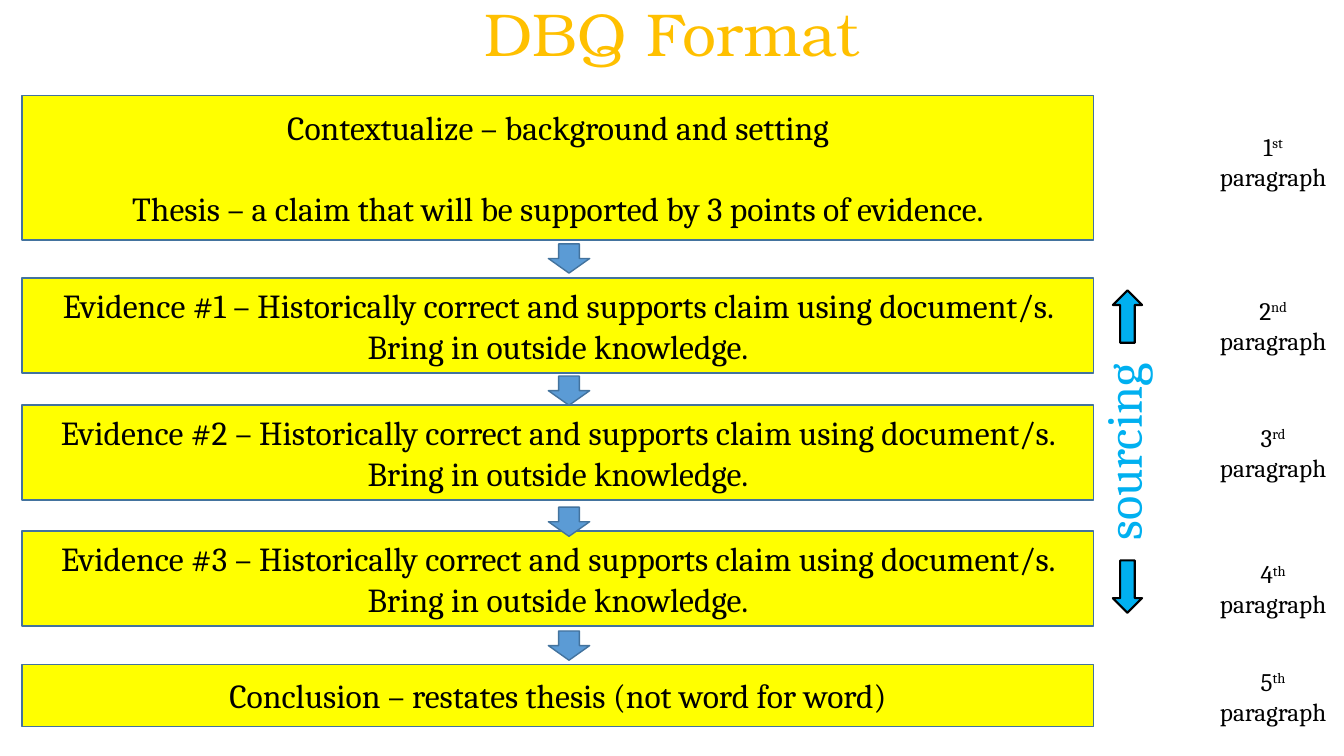
from dataclasses import dataclass

from pptx import Presentation
from pptx.dml.color import RGBColor
from pptx.enum.shapes import MSO_SHAPE
from pptx.enum.text import MSO_ANCHOR, MSO_AUTO_SIZE, PP_ALIGN
from pptx.util import Pt

COLORS = {
    "title": "FFC000",
    "step": "FFFF00",
    "outline": "43739E",
    "flow": "5B9BD5",
    "sourcing": "00B0F0",
    "ink": "000000",
}
TITLE_FONT = "TeX Gyre Bonum"
BODY_FONT = "Cambria"
STEP_LEFT, STEP_WIDTH = 15.84, 765.36
FLOW_LEFT, FLOW_WIDTH, FLOW_HEIGHT = 391.7, 29.5, 20.9
LABEL_LEFT, LABEL_WIDTH, LABEL_HEIGHT = 859, 100.8, 51.1


@dataclass
class Step:
    top: float
    height: float
    lines: list[str]
    label_top: float
    ordinal: str


def evidence(number: int) -> list[str]:
    return [f"Evidence #{number} – Historically correct and supports claim "
            "using document/s. Bring in outside knowledge."]


STEPS = [
    Step(68.4, 103, ["Contextualize – background and setting",
                     "Thesis – a claim that will be supported by 3 points of evidence."],
         90, "st"),
    Step(198.7, 67.7, evidence(1), 207.4, "nd"),
    Step(289.4, 67.7, evidence(2), 298.1, "rd"),
    Step(379.4, 67.7, evidence(3), 395.3, "th"),
    Step(474.5, 44.6, ["Conclusion – restates thesis (not word for word)"], 472.3, "th"),
]
FLOW_TOPS = [174.2, 268.6, 362.2, 450.7]


def color(name: str) -> RGBColor:
    return RGBColor.from_string(COLORS[name])


def format_paragraph(para, size: float, ink: str = "ink", font: str = BODY_FONT) -> None:
    para.alignment = PP_ALIGN.CENTER
    para.font.name = font
    para.font.size = Pt(size)
    para.font.color.rgb = color(ink)


def add_block(shapes, kind, left: float, top: float, width: float, height: float,
              fill: str, outline: str, weight: float):
    block = shapes.add_shape(kind, Pt(left), Pt(top), Pt(width), Pt(height))
    block.shadow.inherit = False
    block.fill.solid()
    block.fill.fore_color.rgb = color(fill)
    block.line.color.rgb = color(outline)
    block.line.width = Pt(weight)
    return block


def add_label(shapes, left: float, top: float, width: float, height: float):
    box = shapes.add_textbox(Pt(left), Pt(top), Pt(width), Pt(height))
    box.text_frame.word_wrap = True
    box.text_frame.auto_size = MSO_AUTO_SIZE.SHAPE_TO_FIT_TEXT
    return box


def add_title(page) -> None:
    title = page.shapes.title
    title.left, title.top, title.width, title.height = Pt(0), Pt(0), Pt(960), Pt(52.6)
    frame = title.text_frame
    frame.text = "DBQ Format"
    frame.auto_size = MSO_AUTO_SIZE.NONE
    frame.vertical_anchor = MSO_ANCHOR.MIDDLE
    para = frame.paragraphs[0]
    para.line_spacing = 0.9
    format_paragraph(para, 43.2, "title", TITLE_FONT)


def add_step(page, number: int, step: Step) -> None:
    box = add_block(page.shapes, MSO_SHAPE.RECTANGLE, STEP_LEFT, step.top,
                    STEP_WIDTH, step.height, "step", "outline", 1)
    frame = box.text_frame
    frame.vertical_anchor = MSO_ANCHOR.MIDDLE
    frame.text = "\n".join(step.lines)
    for para in frame.paragraphs:
        format_paragraph(para, 24)
    for para in frame.paragraphs[1:]:
        para.space_before = Pt(29)

    label = add_label(page.shapes, LABEL_LEFT, step.label_top, LABEL_WIDTH, LABEL_HEIGHT)
    para = label.text_frame.paragraphs[0]
    format_paragraph(para, 18)
    for text in (str(number), step.ordinal, " paragraph"):
        span = para.add_run()
        span.text = text
        if text == step.ordinal:
            span.font._element.set("baseline", "30000")


def add_sourcing(page) -> None:
    group = page.shapes.add_group_shape()
    label = add_label(group.shapes, 714.2, 297.4, 175, 51.1)
    label.rotation = 270
    para = label.text_frame.paragraphs[0]
    para.text = "sourcing"
    format_paragraph(para, 36, "sourcing")
    for kind, top in ((MSO_SHAPE.DOWN_ARROW, 400.3), (MSO_SHAPE.UP_ARROW, 207.4)):
        add_block(group.shapes, kind, 794.9, top, 20.9, 37.4, "sourcing", "ink", 1.5)


def main() -> None:
    deck = Presentation()
    deck.slide_width, deck.slide_height = Pt(960), Pt(540)
    page = deck.slides.add_slide(deck.slide_layouts[5])
    add_title(page)
    for number, step in enumerate(STEPS, start=1):
        add_step(page, number, step)
    for top in FLOW_TOPS:
        add_block(page.shapes, MSO_SHAPE.DOWN_ARROW, FLOW_LEFT, top,
                  FLOW_WIDTH, FLOW_HEIGHT, "flow", "outline", 1)
    add_sourcing(page)
    deck.save("out.pptx")


if __name__ == "__main__":
    main()
